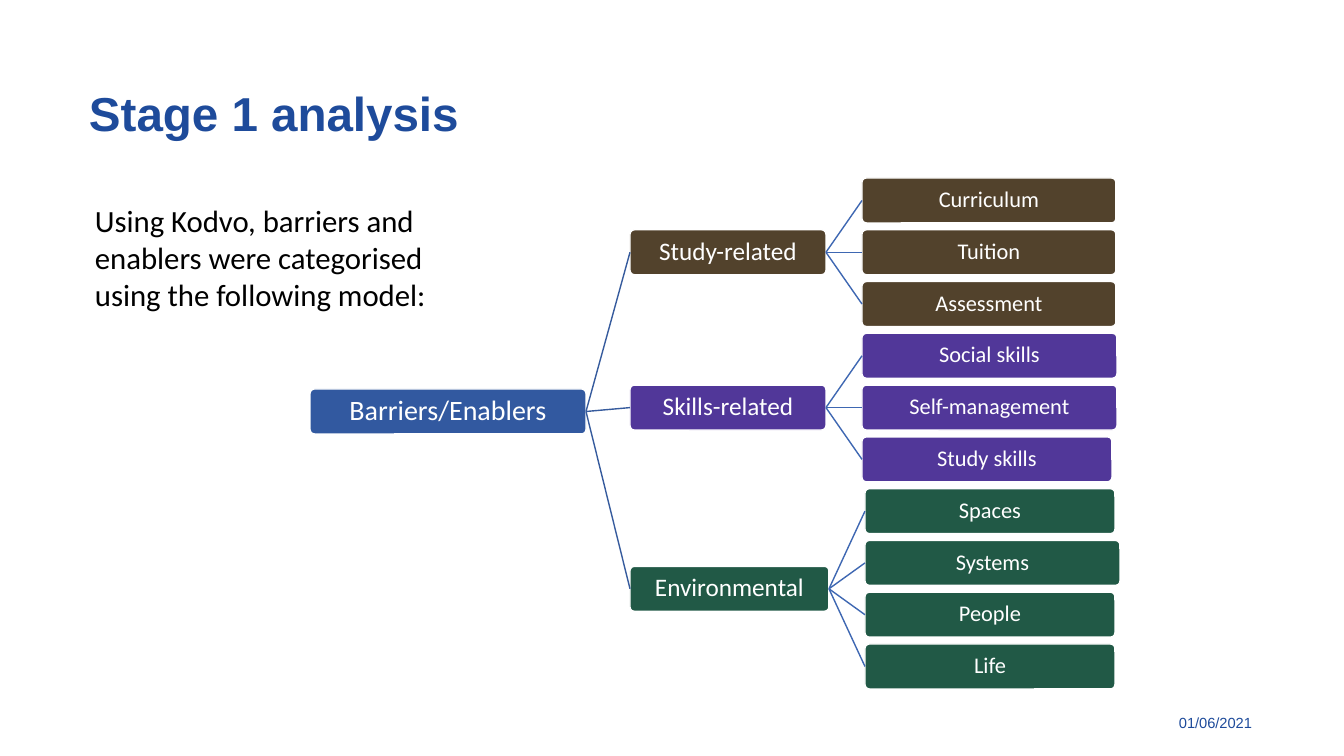
import pptx
import pptx.util
import pptx.dml.color
import pptx.enum.shapes
import pptx.enum.text
import pptx.oxml.ns
import lxml.etree

PX = 914400 / 100.8
HUES = {
    "title": "1E4B9B", "text": "000000", "white": "FFFFFF",
    "root": "3259A0", "stem": "365B9D", "twig": "3E67B2",
    "study": "52422C", "skills": "513799", "place": "215946",
}
ALIGN = pptx.enum.text.PP_ALIGN
TREE = [
    ("Study-related", "study", 196,
     [("Curriculum", 254), ("Tuition", 254), ("Assessment", 254)]),
    ("Skills-related", "skills", 196,
     [("Social skills", 255), ("Self-management", 255), ("Study skills", 250)]),
    ("Environmental", "place", 199,
     [("Spaces", 250), ("Systems", 255), ("People", 250), ("Life", 250)]),
]


def emu(n):
    return pptx.util.Emu(round(n * PX))


def hue(name):
    return pptx.dml.color.RGBColor.from_string(HUES[name])


def write(frame, words, size, color, face="Calibri", align=ALIGN.LEFT, bold=False):
    frame.word_wrap = True
    para = frame.paragraphs[0]
    para.text = words
    para.alignment = align
    para.font.size = pptx.util.Pt(size)
    para.font.name = face
    para.font.bold = bold
    para.font.color.rgb = hue(color)
    return para


def pad(frame, left, top, right, bottom):
    frame.margin_left, frame.margin_top = emu(left), emu(top)
    frame.margin_right, frame.margin_bottom = emu(right), emu(bottom)


def label(slide, box, *args, **style):
    frame = slide.shapes.add_textbox(*map(emu, box)).text_frame
    return frame, write(frame, *args, **style)


def heading(slide, box):
    frame, para = label(slide, box, "Stage 1 analysis", 34, "title",
                        face="Arial", bold=True)
    pad(frame, 4, 4, 2, 4)
    para.line_spacing = 0.85
    para.space_before = pptx.util.Pt(10)


def node(slide, box, words, size, color):
    kind = pptx.enum.shapes.MSO_SHAPE.ROUNDED_RECTANGLE
    shape = slide.shapes.add_shape(kind, *map(emu, box))
    shape.adjustments[0] = 0.1
    shape.shadow.inherit = False
    shape.fill.solid()
    shape.fill.fore_color.rgb = hue(color)
    shape.line.color.rgb = hue("white")
    shape.line.width = pptx.util.Pt(1)
    frame = shape.text_frame
    pad(frame, 2, 2, 2, 2)
    frame.vertical_anchor = pptx.enum.text.MSO_ANCHOR.MIDDLE
    write(frame, words, size, "white", align=ALIGN.CENTER).line_spacing = 0.9
    return shape


def link(slide, start, end, color):
    kind = pptx.enum.shapes.MSO_CONNECTOR.STRAIGHT
    line = slide.shapes.add_connector(kind, 0, 0, 0, 0)
    line.begin_connect(start, 3)
    line.end_connect(end, 1)
    line.line.color.rgb = hue(color)
    line.line.width = pptx.util.Pt(1)
    lxml.etree.SubElement(line._element.spPr, pptx.oxml.ns.qn("a:effectLst"))


def tree(slide, box):
    x, y, wide, high = box
    tall, gap = 45, 36
    last = sum(len(group[3]) for group in TREE) - 1
    step = (high - tall) / last
    root = node(slide, (x, y + 211, 276, tall), "Barriers/Enablers", 20, "root")
    left = x + 320
    row = 0
    for words, color, width, leaves in TREE:
        mid = row + (len(leaves) - 1) / 2
        branch = node(slide, (left, y + mid * step, width, tall), words, 18, color)
        link(slide, root, branch, "stem")
        for name, span in leaves:
            spot = (left + width + gap, y + row * step, span, tall)
            link(slide, branch, node(slide, spot, name, 16, color), "twig")
            row += 1


def main():
    deck = pptx.Presentation()
    deck.slide_width, deck.slide_height = emu(1344), emu(756)
    slide = deck.slides.add_slide(deck.slide_layouts[6])
    label(slide, (1116, 709, 146, 28), "01/06/2021", 10.5, "title",
          face="Arial", align=ALIGN.RIGHT)
    heading(slide, (85, 89, 804, 59))
    label(slide, (85, 197, 390, 221),
          "Using Kodvo, barriers and enablers were categorised "
          "using the following model:", 22, "text")
    tree(slide, (310, 178, 810, 511))
    deck.save("out.pptx")


if __name__ == "__main__":
    main()
